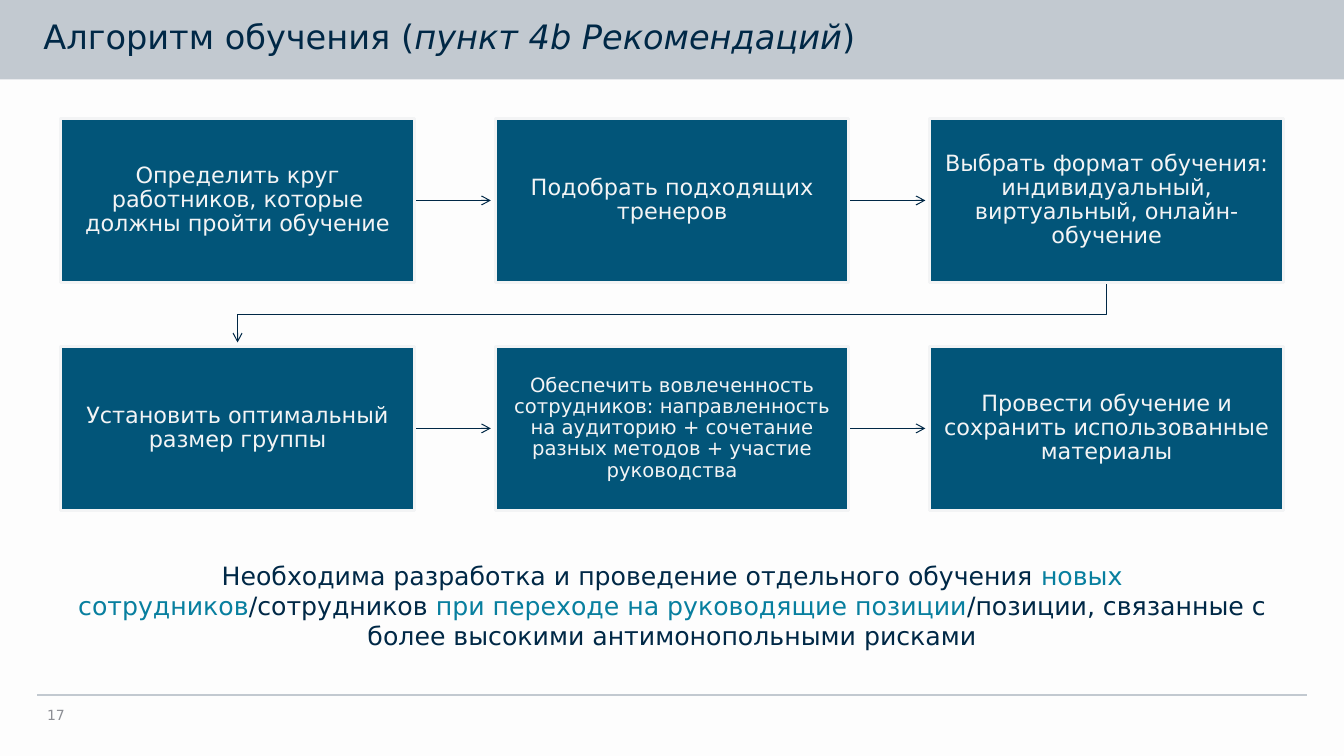
from dataclasses import dataclass

from lxml import etree
from pptx import Presentation
from pptx.dml.color import RGBColor
from pptx.enum.shapes import MSO_CONNECTOR, MSO_SHAPE
from pptx.enum.text import MSO_ANCHOR, PP_ALIGN
from pptx.oxml.ns import qn
from pptx.util import Pt

RECTANGLE = MSO_SHAPE.RECTANGLE
STRAIGHT = MSO_CONNECTOR.STRAIGHT
TOP, MIDDLE = MSO_ANCHOR.TOP, MSO_ANCHOR.MIDDLE
LEFT, CENTER = PP_ALIGN.LEFT, PP_ALIGN.CENTER

PAPER = RGBColor(0xFD, 0xFD, 0xFD)
SILVER = RGBColor(0xC2, 0xC9, 0xD0)
NAVY = RGBColor(0x00, 0x28, 0x46)
BLUE = RGBColor(0x02, 0x55, 0x79)
PALE = RGBColor(0xF3, 0xF4, 0xF5)
TEAL = RGBColor(0x08, 0x7F, 0x9F)
GRAY = RGBColor(0x8C, 0x8E, 0x94)
FONT = "DejaVu Sans"

# Grid of steps, in points
COLUMNS = 3
GRID_LEFT, GRID_TOP = 43.4, 84.4
STEP_WIDTH, STEP_HEIGHT = 252.6, 117.6
COLUMN_PITCH, ROW_PITCH = 310.4, 162.8
ARROW_LENGTH = 54.6


@dataclass
class Span:
    text: str
    color: RGBColor = NAVY
    italic: bool = False


@dataclass
class Step:
    text: str
    size: float = 16
    inset: float = 8.64


@dataclass
class Label:
    left: float
    top: float
    width: float
    height: float
    spans: list[Span]
    size: float
    align: PP_ALIGN = LEFT
    anchor: MSO_ANCHOR = MIDDLE
    line_spacing: float = 1.0
    insets: tuple[float, float] = (7.2, 3.6)


STEPS = [
    Step("Определить круг работников, которые должны пройти обучение"),
    Step("Подобрать подходящих тренеров"),
    Step("Выбрать формат обучения: индивидуальный, виртуальный, онлайн-обучение"),
    Step("Установить оптимальный размер группы"),
    Step("Обеспечить вовлеченность сотрудников: направленность на аудиторию + "
         "сочетание разных методов + участие руководства", 14, 7.56),
    Step("Провести обучение и сохранить использованные материалы"),
]

LABELS = [
    Label(0, -0.6, 960, 57, [
        Span("Алгоритм обучения ("),
        Span("пункт 4b Рекомендаций", italic=True),
        Span(")"),
    ], 24, line_spacing=0.85, insets=(31, 2.9)),
    Label(43.4, 396.6, 873.4, 72.7, [
        Span("Необходима разработка и проведение отдельного обучения "),
        Span("новых сотрудников", TEAL),
        Span("/сотрудников "),
        Span("при переходе на руководящие позиции", TEAL),
        Span("/позиции, связанные с более высокими антимонопольными рисками"),
    ], 18, CENTER, TOP),
    Label(26.6, 501.4, 90.7, 18.7, [Span("17", GRAY)], 10),
]


def write_text(shape, spans: list[Span], size: float, align, anchor,
               line_spacing: float, insets: tuple[float, float]) -> None:
    across, down = map(Pt, insets)
    frame = shape.text_frame
    frame_format = {
        "word_wrap": True, "vertical_anchor": anchor,
        "margin_left": across, "margin_right": across,
        "margin_top": down, "margin_bottom": down,
    }
    for name, value in frame_format.items():
        setattr(frame, name, value)
    para = frame.paragraphs[0]
    para.alignment = align
    para.line_spacing = line_spacing
    for span in spans:
        run = para.add_run()
        run.text = span.text
        font_format = {"name": FONT, "size": Pt(size), "italic": span.italic}
        for name, value in font_format.items():
            setattr(run.font, name, value)
        run.font.color.rgb = span.color


def add_label(page, label: Label) -> None:
    box = page.shapes.add_textbox(
        Pt(label.left), Pt(label.top), Pt(label.width), Pt(label.height))
    write_text(box, label.spans, label.size, label.align, label.anchor,
               label.line_spacing, label.insets)


def add_box(page, left: float, top: float, width: float, height: float,
            color: RGBColor):
    box = page.shapes.add_shape(
        RECTANGLE, Pt(left), Pt(top), Pt(width), Pt(height))
    box.shadow.inherit = False
    box.fill.solid()
    box.fill.fore_color.rgb = color
    box.line.fill.background()
    return box


def style_line(shape, color: RGBColor, width: float, arrow: bool = False) -> None:
    shape.line.color.rgb = color
    shape.line.width = Pt(width)
    if arrow:
        outline = shape.line._get_or_add_ln()
        etree.SubElement(outline, qn("a:tailEnd"), type="arrow")


def add_line(page, left: float, y: float, length: float, color: RGBColor,
             width: float, arrow: bool = False) -> None:
    line = page.shapes.add_connector(
        STRAIGHT, Pt(left), Pt(y), Pt(left + length), Pt(y))
    style_line(line, color, width, arrow)
    etree.SubElement(line._element.spPr, qn("a:effectLst"))


def add_row_turn(page) -> None:
    start_x = GRID_LEFT + (COLUMNS - 1) * COLUMN_PITCH + STEP_WIDTH / 2
    end_x = GRID_LEFT + STEP_WIDTH / 2
    start_y = GRID_TOP + STEP_HEIGHT
    turn_y, end_y = start_y + 23, start_y + 42.6
    builder = page.shapes.build_freeform(Pt(start_x), Pt(start_y))
    corners = [(start_x, turn_y), (end_x, turn_y), (end_x, end_y)]
    builder.add_line_segments([(Pt(x), Pt(y)) for x, y in corners], close=False)
    turn = builder.convert_to_shape()
    turn.shadow.inherit = False
    turn.fill.background()
    style_line(turn, NAVY, 0.75, arrow=True)


def add_step(page, index: int, step: Step) -> None:
    row, column = divmod(index, COLUMNS)
    left = GRID_LEFT + column * COLUMN_PITCH
    top = GRID_TOP + row * ROW_PITCH
    if column < COLUMNS - 1:
        add_line(page, left + STEP_WIDTH, top + STEP_HEIGHT / 2,
                 ARROW_LENGTH, NAVY, 0.75, arrow=True)
    box = add_box(page, left, top, STEP_WIDTH, STEP_HEIGHT, BLUE)
    style_line(box, PALE, 2)
    write_text(box, [Span(step.text, PALE)], step.size, CENTER, MIDDLE, 0.9,
               (step.inset, step.inset))


def main() -> None:
    deck = Presentation()
    deck.slide_width, deck.slide_height = Pt(960), Pt(540)
    page = deck.slides.add_slide(deck.slide_layouts[6])
    page.background.fill.solid()
    page.background.fill.fore_color.rgb = PAPER

    # Header band and footer rule
    add_box(page, 0, 0, 960, 56.8, SILVER)
    add_line(page, 26.6, 496.6, 907, SILVER, 1.5)

    # Flow of steps
    add_row_turn(page)
    for index, step in enumerate(STEPS):
        add_step(page, index, step)

    # Title, conclusion and page number
    for label in LABELS:
        add_label(page, label)

    deck.save("out.pptx")


if __name__ == "__main__":
    main()
